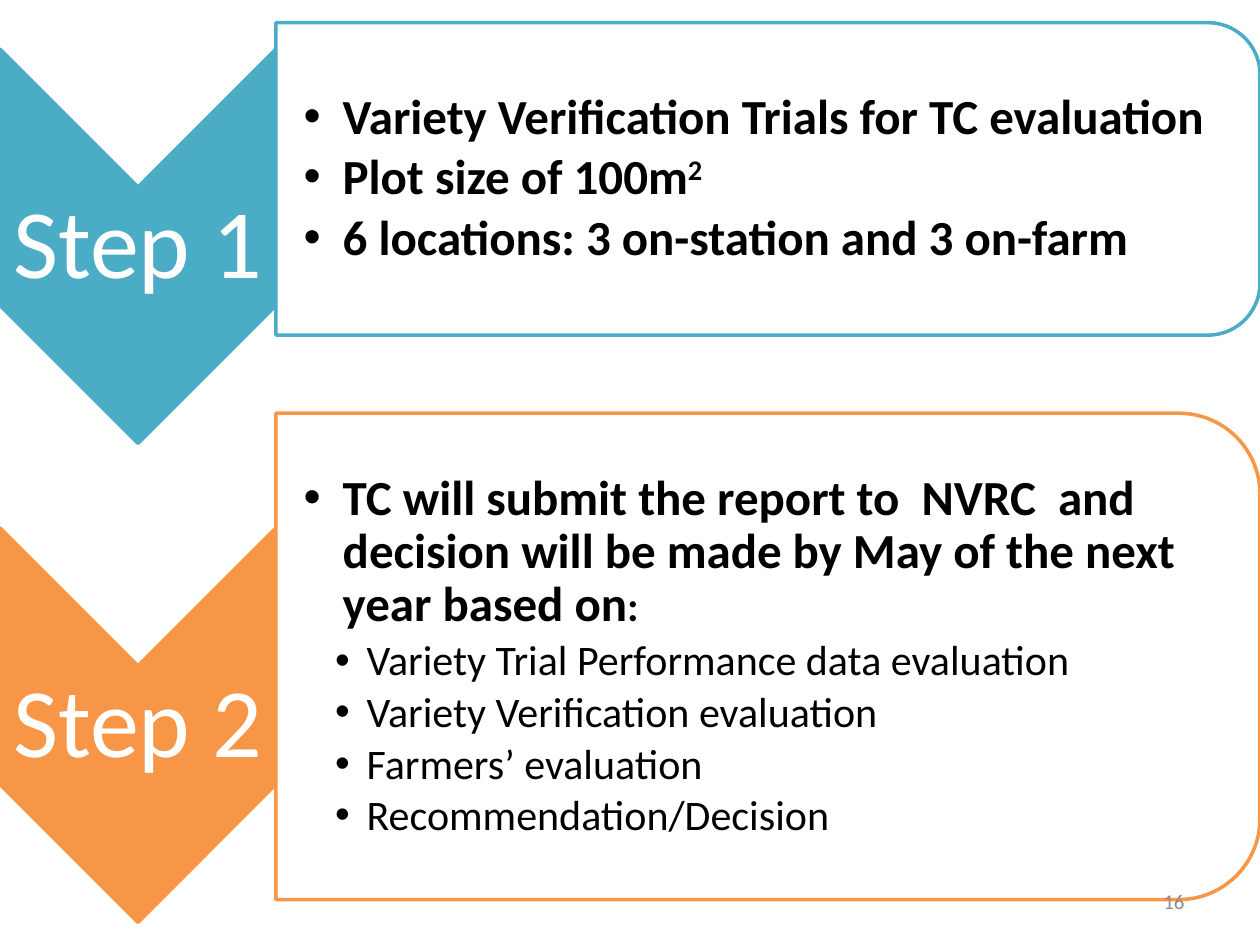
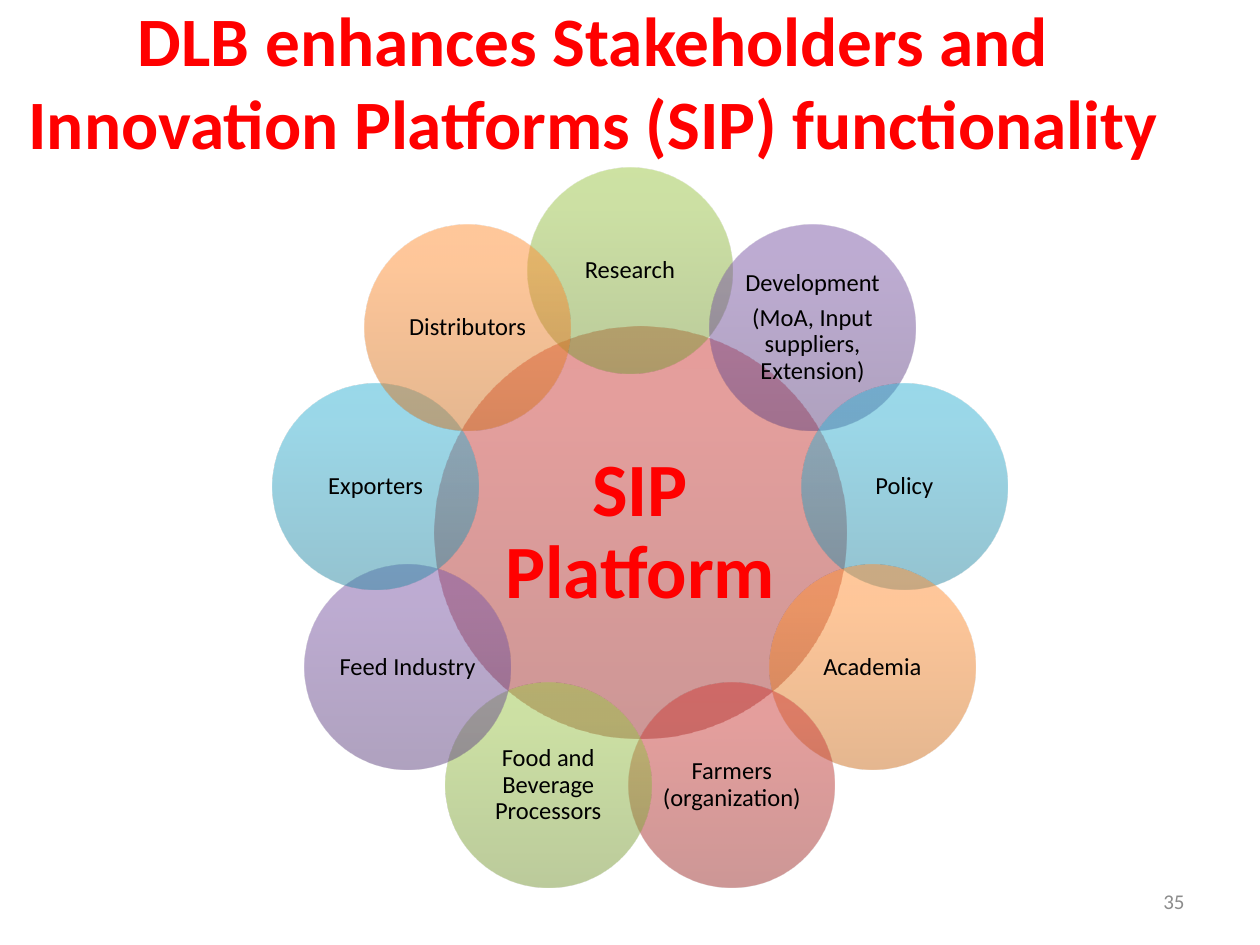
import math

import pptx
import pptx.dml.color
import pptx.enum.shapes
import pptx.enum.text
import pptx.oxml
import pptx.oxml.ns
import pptx.util
from lxml import etree

Inches = pptx.util.Inches
Pt = pptx.util.Pt
ALIGN = pptx.enum.text.PP_ALIGN
SHAPE = pptx.enum.shapes.MSO_SHAPE

# Shared look
FONT = "Calibri"
WHITE, BLACK, RED, GREY = "FFFFFF", "000000", "FF0000", "8C8C8C"
TEAL, ORANGE = "4BACC6", "F79646"
GRADIENTS = {
    "red": ("9C2F2D", "CB3E3A", "CE3B37"),
    "green": ("779737", "9BC348", "9DC746"),
    "purple": ("5F4480", "7B58A6", "7C57A8"),
    "blue": ("2A88A2", "37B1D2", "34B4D6"),
    "orange": ("CC6E20", "FF9034", "FF9136"),
}
DIAGONAL = math.sqrt(0.5)
CORNER = 1 / 6  # corner radius of a panel as a share of its height


def color(value):
    return pptx.dml.color.RGBColor.from_string(value)


def add_child(parent, tag, **attributes):
    return etree.SubElement(parent, pptx.oxml.ns.qn(tag), **attributes)


def set_alpha(rgb_element, percent):
    add_child(rgb_element, "a:alpha", val=str(percent * 1000))


def add_text_frame(slide, box, inset=(0.1, 0.05, 0.1, 0.05)):
    """Add a wrapped, vertically centred text box and return its frame."""
    frame = slide.shapes.add_textbox(*map(Inches, box)).text_frame
    frame.word_wrap = True
    frame.vertical_anchor = pptx.enum.text.MSO_ANCHOR.MIDDLE
    (frame.margin_left, frame.margin_top,
     frame.margin_right, frame.margin_bottom) = map(Inches, inset)
    return frame


def next_paragraph(frame, first):
    return frame.paragraphs[0] if first else frame.add_paragraph()


def add_run(paragraph, text, size, value, bold=False):
    run = paragraph.add_run()
    run.text = text
    font = run.font
    font.name, font.size, font.bold = FONT, Pt(size), bold
    font.color.rgb = color(value)
    return run


def add_label(slide, box, lines, size, value, bold=False, inset=0.02):
    """Centred diagram text, one paragraph for each line."""
    frame = add_text_frame(slide, box, [inset] * 4)
    for index, line in enumerate(lines):
        paragraph = next_paragraph(frame, index == 0)
        paragraph.alignment = ALIGN.CENTER
        paragraph.line_spacing = 0.9
        paragraph.space_after = Pt(size * 0.35)
        add_run(paragraph, line, size, value, bold)


def add_slide_number(slide, number):
    paragraph = add_text_frame(slide, (7.17, 6.95, 2.33, 0.4)).paragraphs[0]
    paragraph.alignment = ALIGN.RIGHT
    add_run(paragraph, str(number), 12, GREY)


def add_title(slide, text):
    paragraph = add_text_frame(slide, (0, 0.08, 9.42, 1.12)).paragraphs[0]
    paragraph.alignment = ALIGN.CENTER
    add_run(paragraph, text, 39.6, RED, bold=True)


# Step slide

def add_turned_shape(slide, kind, box, fill, line):
    """Add a shape turned by 90 degrees so that it covers the given box."""
    left, top, width, height = box
    shape = slide.shapes.add_shape(
        kind, Inches(left + (width - height) / 2),
        Inches(top + (height - width) / 2), Inches(height), Inches(width))
    shape.rotation = 90
    shape.shadow.inherit = False
    shape.fill.solid()
    shape.fill.fore_color.rgb = color(fill)
    shape.line.color.rgb = color(line)
    shape.line.width = Pt(2)
    return shape


def add_bullet(paragraph, level, size):
    """Level 1 is the main list, level 2 the indented one."""
    indent, hanging = {1: (0.31, 0.31), 2: (0.5, 0.25)}[level]
    paragraph.level = level
    paragraph.line_spacing = 0.9
    paragraph.space_after = Pt(size * 0.15)
    properties = paragraph._p.get_or_add_pPr()
    properties.set("marL", str(Inches(indent)))
    properties.set("indent", str(-Inches(hanging)))
    add_child(properties, "a:buFont", typeface="Arial")
    add_child(properties, "a:buChar", char="•")


def add_step(slide, name, accent, chevron_top, panel_top, panel_height, items):
    """One chevron with its label and the bullet panel beside it.

    An item is a level and its runs: text, size, bold, superscript.
    """
    chevron_width = 2.19
    add_turned_shape(slide, SHAPE.CHEVRON,
                     (0, chevron_top, chevron_width, 3.13), accent, accent)
    add_label(slide, (0, chevron_top + 1.1, chevron_width, 0.94),
              [name], 56, WHITE, inset=0.04)

    # Panel, with text kept clear of its round corners
    panel_width = 10 - chevron_width
    panel = add_turned_shape(
        slide, SHAPE.ROUND_2_SAME_RECTANGLE,
        (chevron_width, panel_top, panel_width, panel_height), WHITE, accent)
    panel.adjustments[0] = CORNER
    set_alpha(panel.fill._xPr.find(".//" + pptx.oxml.ns.qn("a:srgbClr")), 90)
    clear = panel_height * CORNER * (1 - DIAGONAL)
    frame = add_text_frame(
        slide, (chevron_width, panel_top + clear,
                panel_width - clear, panel_height - 2 * clear),
        (0.22, 0.02, 0.02, 0.02))
    for index, (level, runs) in enumerate(items):
        paragraph = next_paragraph(frame, index == 0)
        add_bullet(paragraph, level, runs[0][1])
        for text, size, bold, superscript in runs:
            run = add_run(paragraph, text, size, BLACK, bold)
            if superscript:
                run.font._element.set("baseline", "30000")


def main_run(text, superscript=False):
    return text, 28, True, superscript


def build_steps_slide(slide):
    add_step(slide, "Step 1", TEAL, 0.39, 0.18, 2.48, [
        (1, [main_run("Variety Verification Trials for TC evaluation")]),
        (1, [main_run("Plot size of 100m"), main_run("2", True)]),
        (1, [main_run("6 locations: 3 on-station and 3 on-farm")]),
    ])
    criteria = ("Variety Trial Performance data evaluation",
                "Variety Verification evaluation",
                "Farmers’ evaluation",
                "Recommendation/Decision")
    decision = ("TC will submit the report to  NVRC  and decision will be "
                "made by May of the next year based on")
    add_step(slide, "Step 2", ORANGE, 4.19, 3.28, 3.86, [
        (1, [main_run(decision), (":", 24, True, False)]),
        *[(2, [(text, 24, False, False)]) for text in criteria],
    ])
    add_slide_number(slide, 16)


# Platform slide

def add_circle(slide, center, diameter, gradient, lines, size,
               value=BLACK, bold=False, inset=0.02):
    """Half-transparent circle with text in its inscribed square."""
    def square(side):
        return center[0] - side / 2, center[1] - side / 2, side, side

    circle = slide.shapes.add_shape(
        SHAPE.OVAL, *map(Inches, square(diameter)))
    circle.shadow.inherit = False
    circle.line.fill.background()
    circle.fill.gradient()
    circle.fill.gradient_angle = 90
    stops = circle._element.spPr.find(".//" + pptx.oxml.ns.qn("a:gsLst"))
    for stop in list(stops):
        stops.remove(stop)
    for position, stop_color in zip((0, 80, 100), GRADIENTS[gradient]):
        stop = add_child(stops, "a:gs", pos=str(position * 1000))
        set_alpha(add_child(stop, "a:srgbClr", val=stop_color), 50)
    add_label(slide, square(diameter * DIAGONAL), lines, size, value,
              bold, inset)


def add_platform_ring(slide, center, radius, members):
    """Hub circle with the members spread evenly, clockwise from the top."""
    add_circle(slide, center, 3.27, "red", ["SIP Platform"], 43,
               RED, bold=True, inset=0.06)
    for index, (gradient, *lines) in enumerate(members):
        angle = 2 * math.pi * index / len(members)
        x = center[0] + radius * math.sin(angle)
        y = center[1] - radius * math.cos(angle)
        if index == 0:  # the top circle sits slightly off the ring
            x, y = x - 0.08, y + 0.05
        add_circle(slide, (x, y), 1.63, gradient, lines, 14)


def build_platform_slide(slide):
    add_title(slide, "DLB enhances Stakeholders and Innovation Platforms "
                     "(SIP) functionality")
    add_platform_ring(slide, (5.08, 4.23), 2.13, [
        ("green", "Research"),
        ("purple", "Development", "(MoA, Input suppliers, Extension)"),
        ("blue", "Policy"),
        ("orange", "Academia"),
        ("red", "Farmers (organization)"),
        ("green", "Food and Beverage Processors"),
        ("purple", "Feed Industry"),
        ("blue", "Exporters"),
        ("orange", "Distributors"),
    ])
    add_slide_number(slide, 35)


def main():
    presentation = pptx.Presentation()
    presentation.slide_width = Inches(10)
    presentation.slide_height = Inches(7.5)
    for build in (build_steps_slide, build_platform_slide):
        build(presentation.slides.add_slide(presentation.slide_layouts[6]))
    presentation.save("out.pptx")


if __name__ == "__main__":
    main()
